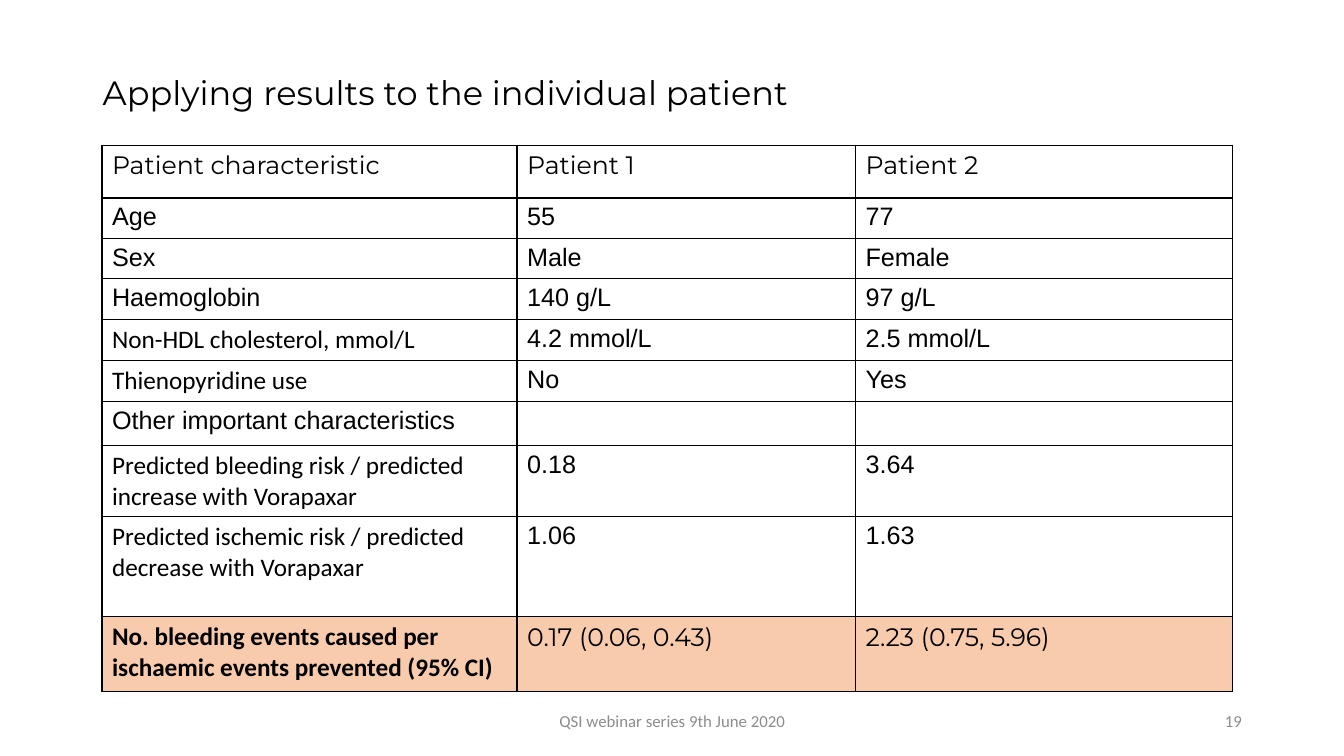
from lxml.etree import SubElement, Element
from pptx import Presentation
from pptx.dml.color import RGBColor as RGB
from pptx.enum.text import MSO_ANCHOR as Anchor, PP_ALIGN as Align
from pptx.oxml.ns import qn
from pptx.util import Cm, Pt

COLORS = {"ink": "000000", "paper": "FFFFFF", "highlight": "F8CBAD", "muted": "8C8C8C"}
COLUMN_WIDTHS = (10.46, 8.53, 9.49)
ROW_HEIGHTS = (1.33, 0.99, 0.99, 0.99, 1.04, 1.04, 1.1, 1.8, 2.52, 1.88)
PATIENTS = (
    ("Patient characteristic", "Patient 1", "Patient 2"),
    ("Age", "55", "77"),
    ("Sex", "Male", "Female"),
    ("Haemoglobin", "140 g/L", "97 g/L"),
    ("Non-HDL cholesterol, mmol/L", "4.2 mmol/L", "2.5 mmol/L"),
    ("Thienopyridine use", "No", "Yes"),
    ("Other important characteristics", "", ""),
    ("Predicted bleeding risk / predicted increase with Vorapaxar", "0.18", "3.64"),
    ("Predicted ischemic risk / predicted decrease with Vorapaxar", "1.06", "1.63"),
    ("No. bleeding events caused per ischaemic events prevented (95% CI)",
     "0.17 (0.06, 0.43)", "2.23 (0.75, 5.96)"),
)
HEADER, RESULT = 0, len(PATIENTS) - 1
CALIBRI_LABELS = (4, 5, 7, 8, RESULT)


def write(frame, text, font="Arial", size=18, color="ink", bold=False, align=Align.LEFT):
    """Write one formatted paragraph into a text frame."""
    paragraph = frame.paragraphs[0]
    paragraph.alignment = align
    run = paragraph.add_run()
    run.text = text
    run.font.name = font
    run.font.size = Pt(size)
    run.font.bold = bold
    run.font.color.rgb = RGB.from_string(COLORS[color])


def add_text(slide, box, text, **style):
    """Place a wrapped, vertically centred text box."""
    frame = slide.shapes.add_textbox(*map(Cm, box)).text_frame
    frame.word_wrap = True
    frame.vertical_anchor = Anchor.MIDDLE
    write(frame, text, **style)


def draw_borders(cell):
    """Rule all four sides of a cell."""
    properties = cell._tc.get_or_add_tcPr()
    for position, side in enumerate(("lnL", "lnR", "lnT", "lnB")):
        line = Element(qn(f"a:{side}"), w=str(Pt(1)))
        fill = SubElement(line, qn("a:solidFill"))
        SubElement(fill, qn("a:srgbClr"), val=COLORS["ink"])
        properties.insert(position, line)


def cell_font(row, column):
    """Choose the typeface for a table position."""
    if column == 0 and row in CALIBRI_LABELS:
        return "Calibri"
    return "Montserrat" if row in (HEADER, RESULT) else "Arial"


def add_patient_table(slide, left, top):
    """Build the comparison of the two patients."""
    table = slide.shapes.add_table(
        len(PATIENTS), len(COLUMN_WIDTHS), Cm(left), Cm(top),
        Cm(sum(COLUMN_WIDTHS)), Cm(sum(ROW_HEIGHTS))).table
    table.first_row = table.horz_banding = False
    for column, width in zip(table.columns, COLUMN_WIDTHS):
        column.width = Cm(width)
    for r, (height, entries) in enumerate(zip(ROW_HEIGHTS, PATIENTS)):
        table.rows[r].height = Cm(height)
        for c, entry in enumerate(entries):
            cell = table.cell(r, c)
            cell.fill.solid()
            cell.fill.fore_color.rgb = RGB.from_string(
                COLORS["highlight" if r == RESULT else "paper"])
            draw_borders(cell)
            if entry:
                write(cell.text_frame, entry, font=cell_font(r, c),
                      bold=r == RESULT and c == 0)


def add_footer(slide, top, height):
    """Place the event name and the slide number."""
    style = dict(font="Calibri", size=12, color="muted")
    add_text(slide, (11.23, top, 11.43, height), "QSI webinar series 9th June 2020",
             align=Align.CENTER, **style)
    add_text(slide, (23.93, top, 7.62, height), "19", align=Align.RIGHT, **style)


def main():
    """Build and save the slide."""
    deck = Presentation()
    deck.slide_width, deck.slide_height = Cm(33.87), Cm(19.05)
    slide = deck.slides.add_slide(deck.slide_layouts[6])
    add_text(slide, (2.34, 1.02, 29.21, 2.6), "Applying results to the individual patient",
             font="Montserrat", size=24)
    add_patient_table(slide, 2.57, 3.66)
    add_footer(slide, 17.65, 1.02)
    deck.save("out.pptx")


if __name__ == "__main__":
    main()
